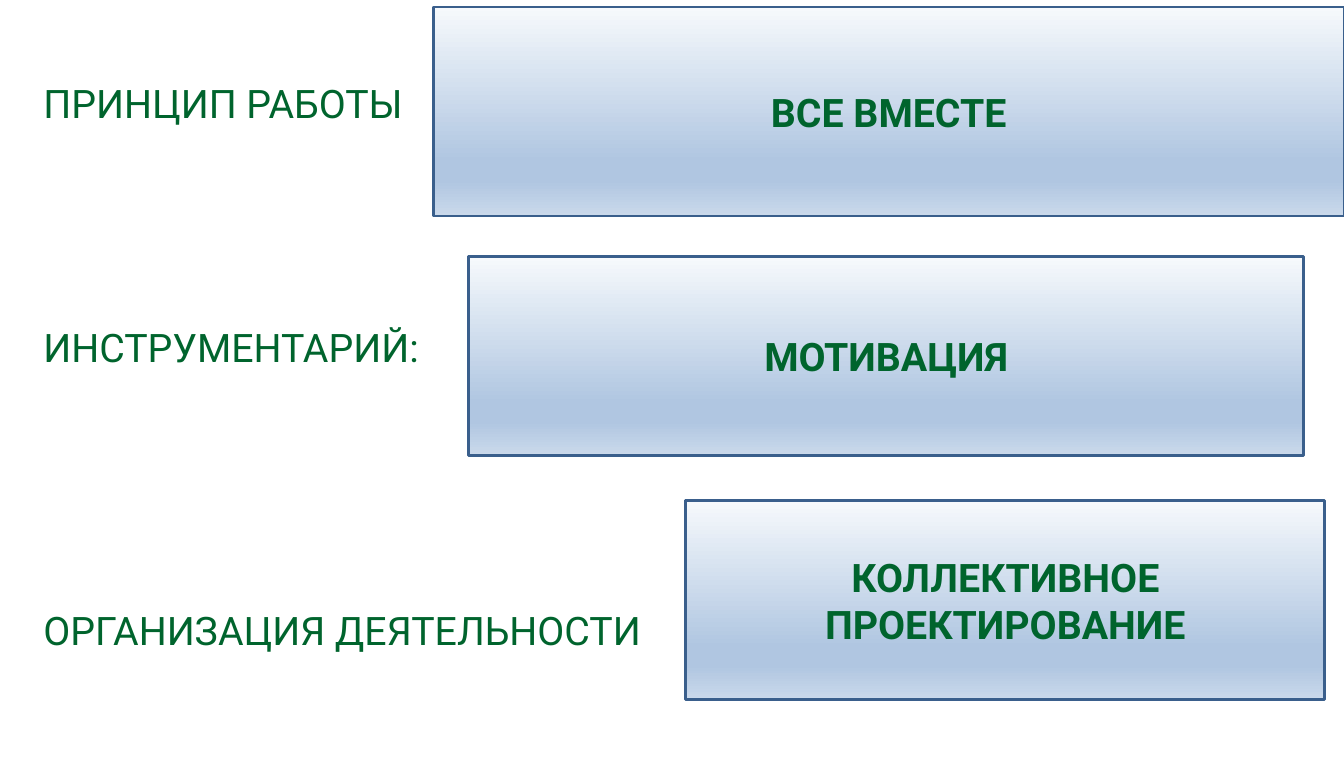
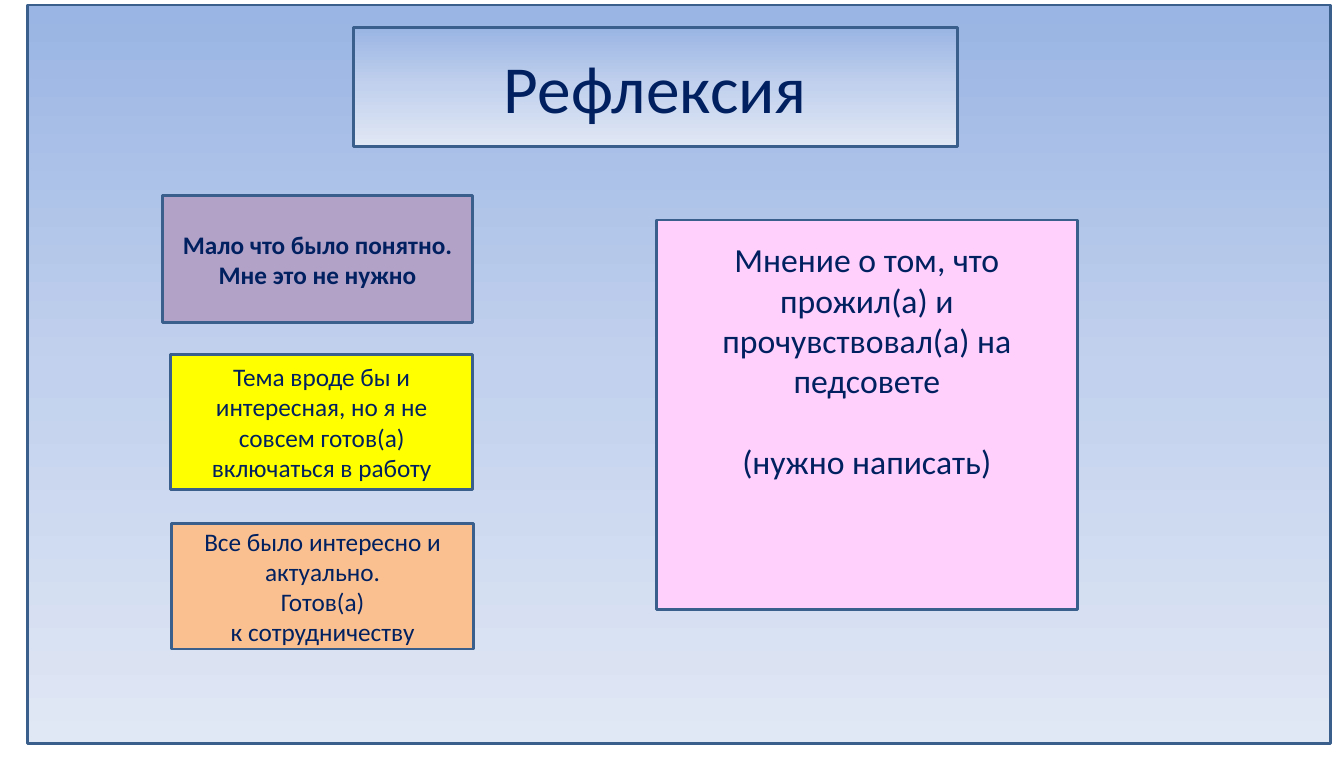
from dataclasses import dataclass

from lxml.etree import SubElement
from pptx import Presentation
from pptx.dml.color import RGBColor as RGB
from pptx.enum.shapes import MSO_SHAPE as SHAPE
from pptx.enum.text import MSO_ANCHOR as ANCHOR, PP_ALIGN as ALIGN
from pptx.oxml.ns import qn
from pptx.util import Pt

PX = 9144


@dataclass(frozen=True)
class Theme:
    green: str = "00642D"
    navy: str = "002060"
    outline: str = "3A5F8C"
    lilac: str = "B3A2C7"
    yellow: str = "FFFF00"
    orange: str = "FAC090"
    pink: str = "FED0FB"
    glass: tuple = ((0, "F6F9FC"), (74, "B0C6E1"), (83, "B0C6E1"), (100, "CAD9EB"))
    sky: tuple = ((0, "9AB5E4"), (50, "C2D1ED"), (100, "E1E8F5"))
    display: str = "Roboto"
    body: str = "Calibri"
    title_size: int = 48
    label_size: int = 28
    prompt_size: int = 24
    card_size: int = 18
    line_width: int = 2


def apply(target, values):
    for name, value in values.items():
        setattr(target, name, value)


class Deck:
    def __init__(self, theme, width, height):
        self.theme = theme
        self.prs = Presentation()
        apply(self.prs, {"slide_width": width * PX, "slide_height": height * PX})
        self.s = None

    def slide(self):
        self.s = self.prs.slides.add_slide(self.prs.slide_layouts[6])

    def gradient(self, sp, stops):
        sp.fill.gradient()
        sp.fill.gradient_angle = 270
        stop_list = next(sp._element.iter(qn("a:gsLst")))
        for old in list(stop_list):
            stop_list.remove(old)
        for position, color in stops:
            stop = SubElement(stop_list, qn("a:gs"), pos=str(position * 1000))
            SubElement(stop, qn("a:srgbClr"), val=color)

    def fill_text(self, tf, lines, color, font, align=ALIGN.CENTER, spacing=1.0, gaps=None):
        tf.word_wrap = True
        for i, line in enumerate(lines):
            p = tf.add_paragraph() if i else tf.paragraphs[0]
            gap = gaps[i] if gaps else 0
            apply(p, {"alignment": align, "line_spacing": spacing, "space_before": Pt(gap)})
            r = p.add_run()
            r.text = line
            apply(r.font, font)
            r.font.color.rgb = RGB.from_string(color)

    def box(self, at, fill):
        sp = self.s.shapes.add_shape(SHAPE.RECTANGLE, *(v * PX for v in at))
        sp.shadow.inherit = False
        if isinstance(fill, tuple):
            self.gradient(sp, fill)
        else:
            sp.fill.solid()
            sp.fill.fore_color.rgb = RGB.from_string(fill)
        sp.line.color.rgb = RGB.from_string(self.theme.outline)
        sp.line.width = Pt(self.theme.line_width)
        sp.text_frame.vertical_anchor = ANCHOR.MIDDLE
        return sp

    def answer(self, at, text):
        t = self.theme
        font = {"name": t.display, "size": Pt(t.label_size), "bold": True}
        self.fill_text(self.box(at, t.glass).text_frame, [text], t.green, font)

    def labels(self, at, lines, gaps):
        t = self.theme
        tf = self.s.shapes.add_textbox(*(v * PX for v in at)).text_frame
        sides = ("left", "top", "right", "bottom")
        apply(tf, {f"margin_{side}": 0 for side in sides})
        font = {"name": t.display, "size": Pt(t.label_size)}
        self.fill_text(tf, lines, t.green, font, ALIGN.LEFT, 0.9, gaps)

    def card(self, at, fill, lines, size, bold=False):
        t = self.theme
        font = {"name": t.body, "size": Pt(size), "bold": bold}
        self.fill_text(self.box(at, fill).text_frame, lines, t.navy, font)

    def prompt(self, at, lines, gaps):
        t = self.theme
        tf = self.box(at, t.pink).text_frame
        apply(tf, {"vertical_anchor": ANCHOR.TOP, "margin_top": 19 * PX})
        font = {"name": t.body, "size": Pt(t.prompt_size)}
        self.fill_text(tf, lines, t.navy, font, gaps=gaps)


def principles(deck):
    deck.slide()
    deck.labels(
        (43, 84, 1226, 637),
        ["ПРИНЦИП РАБОТЫ", "ИНСТРУМЕНТАРИЙ:", "ОРГАНИЗАЦИЯ ДЕЯТЕЛЬНОСТИ"],
        (0, 144, 171),
    )
    for at, text in (
        ((429, 7, 902, 207), "ВСЕ ВМЕСТЕ"),
        ((464, 254, 827, 197), "МОТИВАЦИЯ"),
        ((679, 496, 633, 197), "КОЛЛЕКТИВНОЕ ПРОЕКТИРОВАНИЕ"),
    ):
        deck.answer(at, text)


def reflection(deck):
    t = deck.theme
    deck.slide()
    deck.box((27, 5, 1291, 732), t.sky)
    deck.card((350, 27, 598, 118), t.sky, ["Рефлексия"], t.title_size)
    for at, fill, lines, bold in (
        ((161, 194, 307, 126), t.lilac,
         ["Мало что было понятно.", "Мне это не нужно"], True),
        ((169, 351, 299, 134), t.yellow,
         ["Тема вроде бы и интересная, но я не совсем готов(а) включаться в работу"], False),
        ((170, 519, 299, 124), t.orange,
         ["Все было интересно и актуально.", "Готов(а)", "к сотрудничеству"], False),
    ):
        deck.card(at, fill, lines, t.card_size, bold)
    deck.prompt(
        (650, 218, 417, 386),
        ["Мнение о том, что прожил(а) и прочувствовал(а) на педсовете", "(нужно написать)"],
        (0, 29),
    )


def main():
    deck = Deck(Theme(), 1331, 750)
    principles(deck)
    reflection(deck)
    deck.prs.save("out.pptx")


if __name__ == "__main__":
    main()
